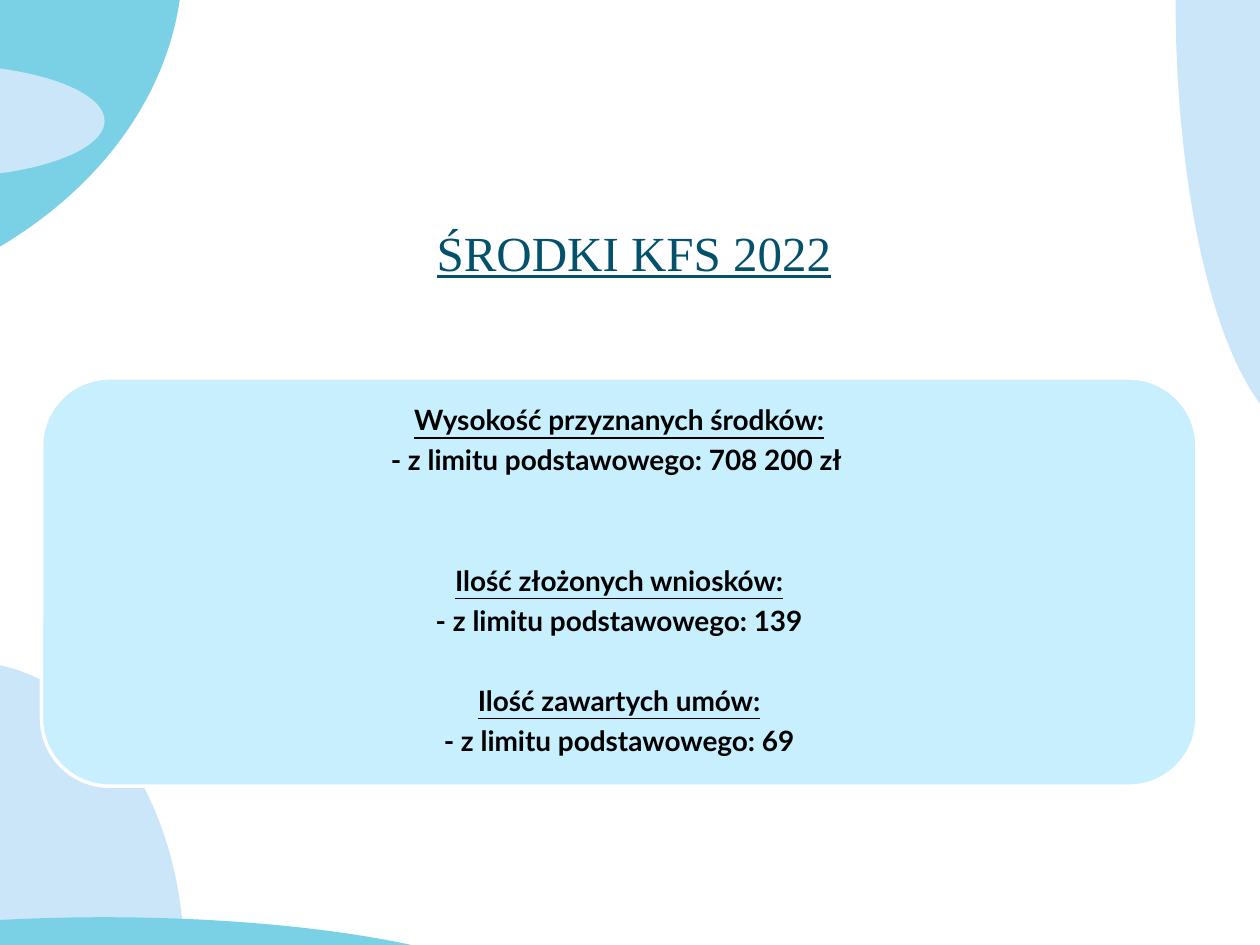
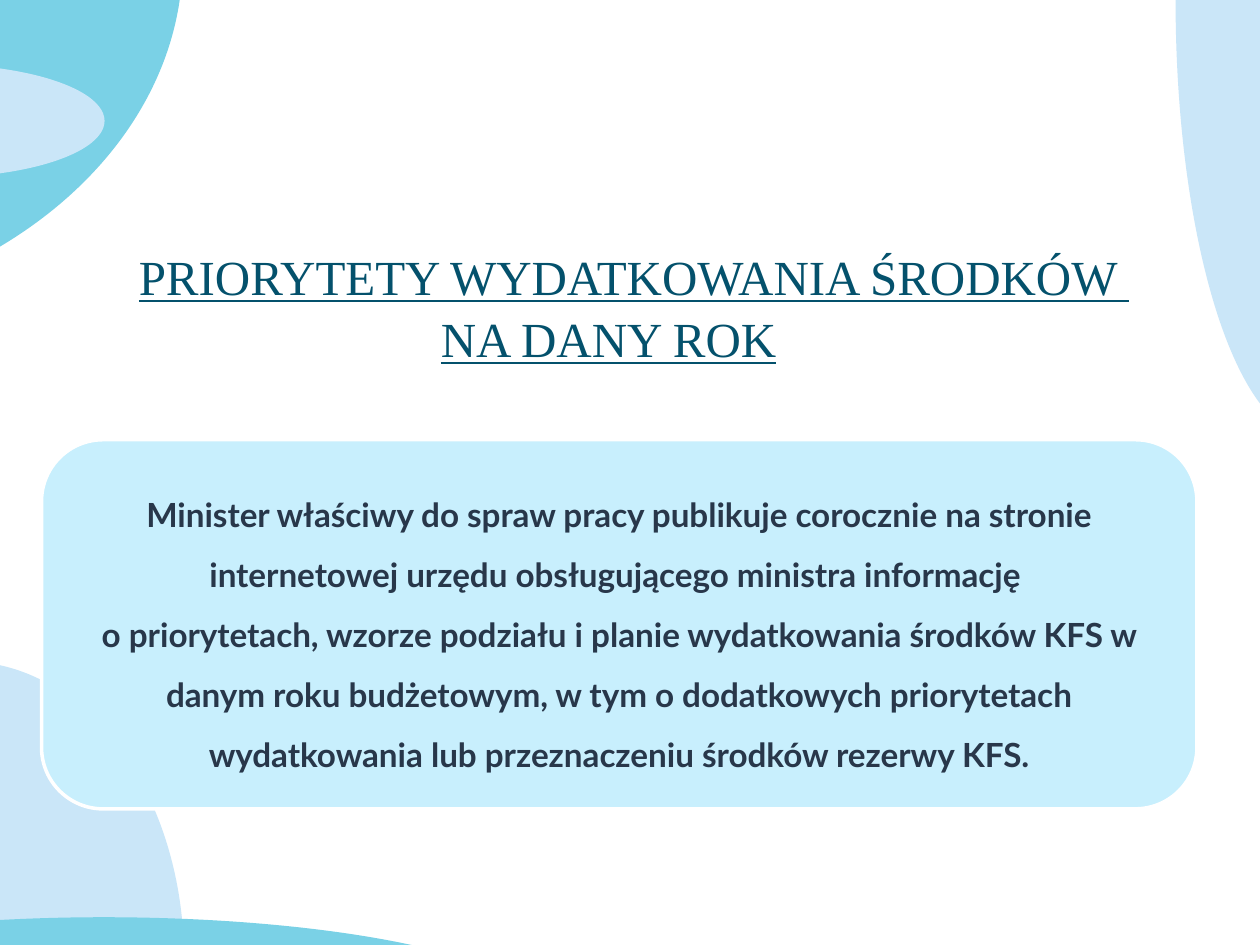
from pptx import Presentation
from pptx.dml.color import RGBColor
from pptx.enum.shapes import MSO_SHAPE
from pptx.enum.text import MSO_ANCHOR, MSO_AUTO_SIZE, PP_ALIGN
from pptx.util import Inches, Pt

TURQUOISE = RGBColor(0x7A, 0xD1, 0xE6)
PALE_BLUE = RGBColor(0xCA, 0xE6, 0xF8)
PANEL_BLUE = RGBColor(0xC8, 0xEF, 0xFD)
TITLE_TEAL = RGBColor(0x04, 0x51, 0x6C)
NAVY = RGBColor(0x28, 0x37, 0x4A)
BLACK = RGBColor(0, 0, 0)
WHITE = RGBColor(0xFF, 0xFF, 0xFF)

TITLE_FONT = "Times New Roman"
BODY_FONT = "Lato"

ELLIPSES = [
    ((-5.95, -3.2, 7.4, 5.75), TURQUOISE),
    ((-1.85, 0.51, 2.68, 0.9), PALE_BLUE),
    ((-2.01, 5.25, 3.47, 4.72), PALE_BLUE),
    ((-2.69, 7.28, 7.03, 1.57), TURQUOISE),
    ((9.33, -3.47, 2.18, 6.94), PALE_BLUE),
]

FUNDS = [
    ("Wysokość przyznanych środków:", "- z limitu podstawowego: 708 200 zł ", 0),
    ("Ilość złożonych wniosków:", "- z limitu podstawowego: 139", 45.8),
    ("Ilość zawartych umów:", "- z limitu podstawowego: 69", 22.9),
]

PRIORITIES = (
    "Minister właściwy do spraw pracy publikuje corocznie na stronie "
    "internetowej urzędu obsługującego ministra informację \v"
    "o priorytetach, wzorze podziału i planie wydatkowania środków KFS "
    "w danym roku budżetowym, w tym o dodatkowych priorytetach "
    "wydatkowania lub przeznaczeniu środków rezerwy KFS."
)


def add_filled(s, kind, box, color):
    """Add a flat preset shape without outline or shadow."""
    sp = s.shapes.add_shape(kind, *map(Inches, box))
    sp.shadow.inherit = False
    sp.fill.solid()
    sp.fill.fore_color.rgb = color
    sp.line.fill.background()
    return sp


def style_runs(p, font, size, color, bold=False, underline=False):
    """Format every run of a paragraph."""
    for r in p.runs:
        r.font.name = font
        r.font.size = Pt(size)
        r.font.color.rgb = color
        r.font.bold = bold
        r.font.underline = underline


def add_title_slide(prs, title, top):
    """Start a slide with the decorative ellipses and an underlined title."""
    s = prs.slides.add_slide(prs.slide_layouts[5])
    for box, color in ELLIPSES:
        add_filled(s, MSO_SHAPE.OVAL, box, color)
    sp = s.shapes.title
    sp.left, sp.top, sp.width, sp.height = map(Inches, (0.33, top, 9, 1.25))
    tf = sp.text_frame
    tf.word_wrap = True
    tf.auto_size = MSO_AUTO_SIZE.NONE
    tf.vertical_anchor = MSO_ANCHOR.MIDDLE
    p = tf.paragraphs[0]
    p.text = title
    p.alignment = PP_ALIGN.CENTER
    p.line_spacing = 1.05
    p.space_before = Pt(0)
    p._p.get_or_add_pPr().set("indent", str(Inches(0.4)))
    style_runs(p, TITLE_FONT, 28, TITLE_TEAL, underline=True)
    return s


def add_panel(s, box, inset):
    """Add the rounded text panel and return its text frame."""
    sp = add_filled(s, MSO_SHAPE.ROUNDED_RECTANGLE, box, PANEL_BLUE)
    sp.line.color.rgb = WHITE
    sp.line.width = Pt(2)
    tf = sp.text_frame
    tf.word_wrap = True
    tf.vertical_anchor = MSO_ANCHOR.MIDDLE
    tf.margin_left = tf.margin_right = Inches(inset)
    tf.margin_top = tf.margin_bottom = Inches(inset)
    return tf


def set_body(p, text, size, color, spacing, before=0, underline=False):
    """Write one centred bold paragraph of a panel."""
    p.text = text
    p.alignment = PP_ALIGN.CENTER
    p.line_spacing = spacing
    p.space_before = Pt(before)
    p.space_after = Pt(0.35 * size)
    style_runs(p, BODY_FONT, size, color, bold=True, underline=underline)


def add_funds_slide(prs):
    """Build the slide with the funds, applications and contracts."""
    s = add_title_slide(prs, "ŚRODKI KFS 2022", 1.36)
    tf = add_panel(s, (0.33, 3, 9.17, 3.24), 0.07)
    p = tf.paragraphs[0]
    for i, (heading, detail, before) in enumerate(FUNDS):
        if i:
            p = tf.add_paragraph()
        set_body(p, heading, 16, BLACK, 0.9, before, underline=True)
        set_body(tf.add_paragraph(), detail, 16, BLACK, 0.9)


def add_priorities_slide(prs):
    """Build the slide on the yearly spending priorities."""
    title = "PRIORYTETY WYDATKOWANIA ŚRODKÓW \vNA DANY ROK"
    s = add_title_slide(prs, title, 1.8)
    tf = add_panel(s, (0.33, 3.49, 9.17, 2.93), 0.08)
    set_body(tf.paragraphs[0], PRIORITIES, 19, NAVY, 1.5)


def main():
    """Build and save the presentation."""
    prs = Presentation()
    prs.slide_width = Inches(10)
    prs.slide_height = Inches(7.5)
    add_funds_slide(prs)
    add_priorities_slide(prs)
    prs.save("out.pptx")


if __name__ == "__main__":
    main()
